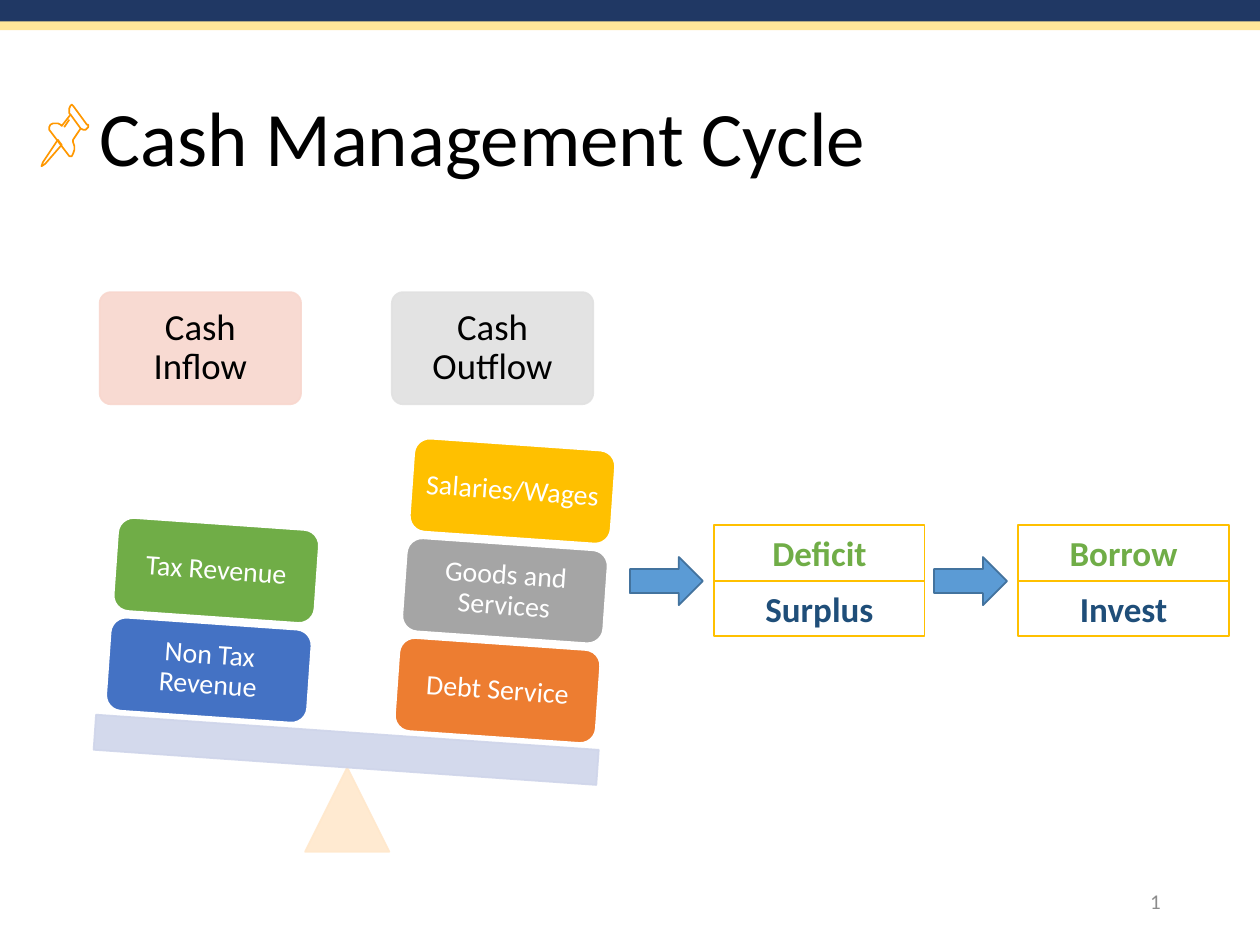
from lxml import etree
from pptx import Presentation
from pptx.dml.color import RGBColor
from pptx.enum.shapes import MSO_SHAPE as SHAPE
from pptx.enum.text import MSO_ANCHOR as ANCHOR, PP_ALIGN as ALIGN
from pptx.oxml.ns import qn
from pptx.util import Cm, Pt

FONT = "Calibri"
COLORS = {
    "navy": "203864", "cream": "FFE699", "black": "000000", "white": "FFFFFF",
    "muted": "8C8C8C", "pin": "FF9800", "pink": "F8D7CE", "silver": "E1E1E1",
    "peach": "FFE8CC", "lavender": "CFD5EA", "orange": "ED7D31", "gray": "A5A5A5",
    "gold": "FFC000", "blue": "4472C4", "green": "70AD47", "ink": "1F4E79",
    "arrow": "5B9BD5", "arrow edge": "43739E",
}

TITLE = "Cash Management Cycle"
BANDS = [(-0.08, 0.58, "navy"), (0.43, 0.18, "cream")]
HEADINGS = [("Cash Inflow", 2.01, "pink"), ("Cash Outflow", 7.9, "silver")]
# Each stack: left and top of its lowest block, then the blocks from the bottom up
STACKS = [
    (8.0, 12.98, [("Debt Service", "orange"), ("Goods and Services", "gray"),
                  ("Salaries/Wages", "gold")]),
    (2.18, 12.57, [("Non Tax Revenue", "blue"), ("Tax Revenue", "green")]),
]
OUTCOMES = [("Deficit", "Surplus"), ("Borrow", "Invest")]
OUTCOME_COLORS = ("green", "ink")

TILT = 4
BLOCK_W, BLOCK_H = 4.06, 1.88
STEP_X, STEP_Y = 0.15, -2.01
OUTCOME_W, OUTCOME_H = 4.24, 1.12
OUTCOME_PITCH = 6.13

# Pushpin outlines in hundredths of an inch: points, closed
PIN_UNIT = Cm(0.0254)
PIN = [
    ([(46, 111), (34, 129), (33, 132), (36, 130), (49, 115)], True),
    ([(56, 91), (64, 102), (66, 103), (68, 103), (69, 102), (70, 101), (70, 99),
      (69, 99), (58, 84), (57, 83), (56, 84), (55, 86), (55, 90)], True),
    ([(56, 91), (49, 100), (48, 99), (46, 98), (42, 98), (40, 99), (39, 101),
      (39, 103), (55, 124), (57, 124), (58, 122), (59, 119), (59, 116),
      (58, 113), (58, 111), (64, 102)], False),
    ([(51, 101), (55, 95)], False),
]


def rgb(name):
    return RGBColor.from_string(COLORS[name])


def add_box(shapes, kind, box, fill, line=None, line_width=1, opacity=None):
    sp = shapes.add_shape(kind, *(Cm(v) for v in box))
    sp.shadow.inherit = False
    sp.fill.solid()
    sp.fill.fore_color.rgb = rgb(fill)
    if line:
        sp.line.color.rgb = rgb(line)
        sp.line.width = Pt(line_width)
    else:
        sp.line.fill.background()
    if opacity:
        for color in sp._element.spPr.iter(qn("a:srgbClr")):
            etree.SubElement(color, qn("a:alpha")).set("val", str(opacity * 1000))
    return sp


def style(p, size, color, align=None, bold=None, spacing=None):
    p.font.name, p.font.size, p.font.bold = FONT, Pt(size), bold
    p.font.color.rgb = rgb(color)
    p.alignment, p.line_spacing = align, spacing


def set_text(sp, text, size, color, inset=None, anchor=ANCHOR.MIDDLE, **kwargs):
    tf = sp.text_frame
    tf.word_wrap = True
    tf.vertical_anchor = anchor
    if inset is not None:
        tf.margin_left = tf.margin_right = tf.margin_top = tf.margin_bottom = Cm(inset)
    p = tf.paragraphs[0]
    p.text = text
    style(p, size, color, **kwargs)


def add_pin(shapes):
    group = shapes.add_group_shape()
    for points, closed in PIN:
        builder = group.shapes.build_freeform(*points[0], scale=PIN_UNIT)
        builder.add_line_segments(points[1:], close=closed)
        sp = builder.convert_to_shape()
        sp.shadow.inherit = False
        sp.fill.background()
        sp.line.color.rgb = rgb("pin")
        sp.line.width = Pt(0.96)


def add_slide_number(shapes):
    box = shapes.add_textbox(Cm(17.93), Cm(17.65), Cm(5.72), Cm(1.02))
    set_text(box, "", 12, "muted", align=ALIGN.RIGHT)
    p = box.text_frame.paragraphs[0]
    field = etree.Element(qn("a:fld"), type="slidenum",
                          id="{B6F15528-21DE-4FAA-801E-634DDDAF4B2B}")
    rpr = etree.SubElement(field, qn("a:rPr"), lang="en-US", sz="1200")
    fill = etree.SubElement(rpr, qn("a:solidFill"))
    etree.SubElement(fill, qn("a:srgbClr"), val=COLORS["muted"])
    etree.SubElement(rpr, qn("a:latin"), typeface=FONT)
    etree.SubElement(field, qn("a:t")).text = "9"
    p._p.insert(1, field)


def add_balance(shapes):
    for text, left, color in HEADINGS:
        sp = add_box(shapes, SHAPE.ROUNDED_RECTANGLE, (left, 5.89, 4.06, 2.26),
                     color, color, opacity=90)
        sp.adjustments[0] = 0.1
        set_text(sp, text, 21, "black", 0.23, align=ALIGN.CENTER, spacing=0.9)

    add_box(shapes, SHAPE.ISOSCELES_TRIANGLE, (6.15, 15.47, 1.7, 1.7),
            "peach", "peach", opacity=90)
    plank = add_box(shapes, SHAPE.RECTANGLE, (1.9, 14.76, 10.16, 0.71),
                    "lavender", "lavender", opacity=90)
    plank.rotation = TILT

    for left, top, blocks in STACKS:
        for i, (text, color) in enumerate(blocks):
            box = (left + i * STEP_X, top + i * STEP_Y, BLOCK_W, BLOCK_H)
            sp = add_box(shapes, SHAPE.ROUNDED_RECTANGLE, box, color, "white")
            sp.rotation = TILT
            set_text(sp, text, 16, "white", 0.18, align=ALIGN.CENTER, spacing=0.9)


def add_outcomes(shapes):
    for col, texts in enumerate(OUTCOMES):
        shift = col * OUTCOME_PITCH
        add_box(shapes, SHAPE.RIGHT_ARROW, (12.7 + shift, 11.23, 1.47, 0.97),
                "arrow", "arrow edge")
        for row, (text, color) in enumerate(zip(texts, OUTCOME_COLORS)):
            box = (14.4 + shift, 10.59 + row * OUTCOME_H, OUTCOME_W, OUTCOME_H)
            sp = add_box(shapes, SHAPE.RECTANGLE, box, "white", "gold")
            set_text(sp, text, 20, color, anchor=ANCHOR.TOP,
                     align=ALIGN.CENTER, bold=True)


def main():
    prs = Presentation()
    prs.slide_width, prs.slide_height = Cm(25.4), Cm(19.05)
    s = prs.slides.add_slide(prs.slide_layouts[5])
    for top, height, color in BANDS:
        add_box(s.shapes, SHAPE.RECTANGLE, (-0.05, top, 25.45, height), color)

    title = s.shapes.title
    title.left, title.top, title.width, title.height = (
        Cm(v) for v in (1.75, 1.02, 21.9, 3.68))
    set_text(title, TITLE, 44, "black", align=ALIGN.LEFT, spacing=0.9)

    add_slide_number(s.shapes)
    add_pin(s.shapes)
    add_balance(s.shapes)
    add_outcomes(s.shapes)
    prs.save("out.pptx")


if __name__ == "__main__":
    main()
